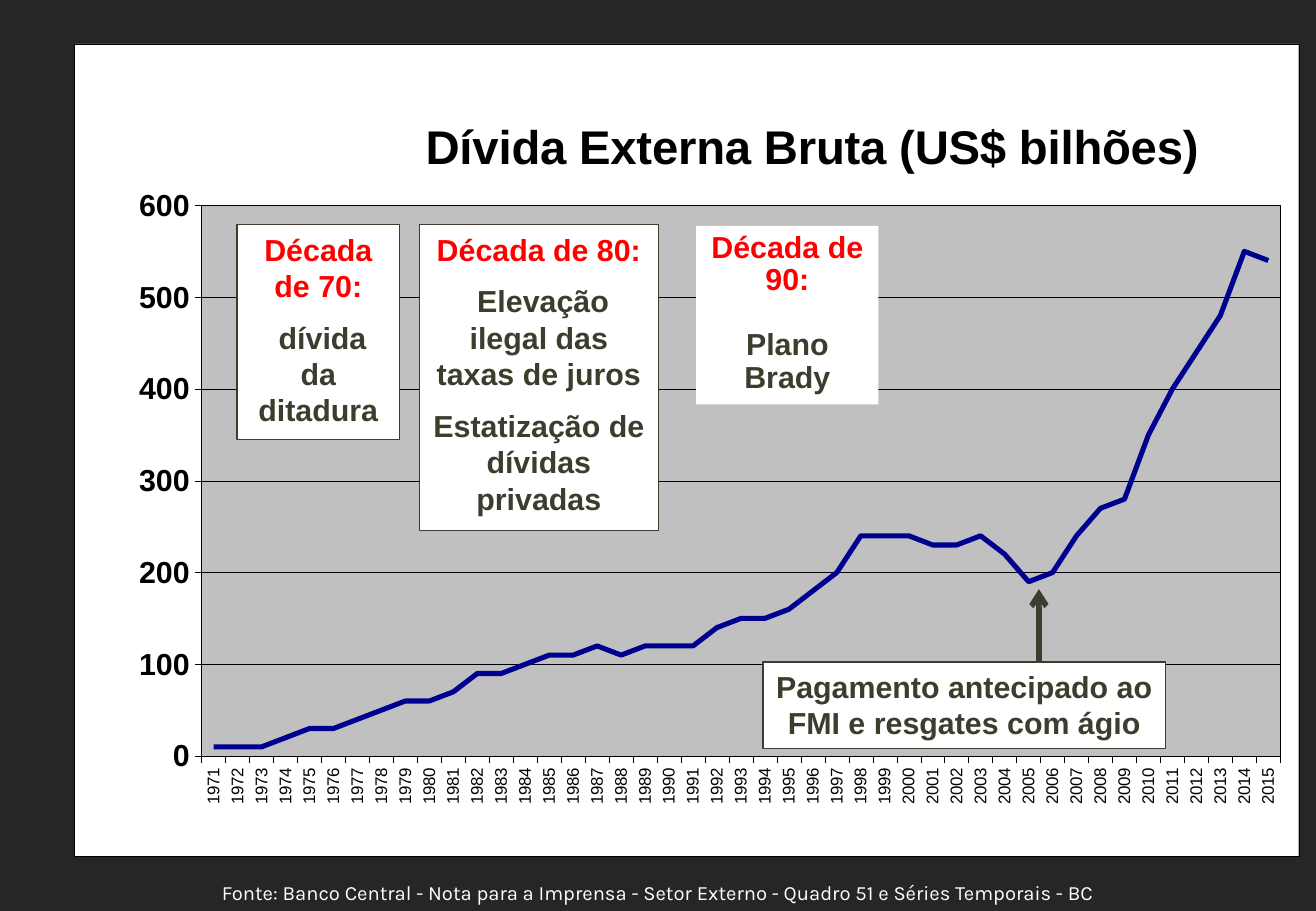
from lxml import etree
from pptx import Presentation
from pptx.chart.data import CategoryChartData
from pptx.dml.color import RGBColor
from pptx.enum.chart import XL_CHART_TYPE as ChartType, XL_TICK_MARK as TickMark
from pptx.enum.shapes import MSO_CONNECTOR as Connector, MSO_SHAPE as Shape
from pptx.enum.text import MSO_ANCHOR as Anchor, PP_ALIGN as Align
from pptx.oxml import parse_xml
from pptx.oxml.ns import nsdecls, qn
from pptx.util import Inches, Pt

BLACK, WHITE, RED, OLIVE = "000000", "FFFFFF", "FF0000", "3E3D2D"
BACKDROP, PLOT_GRAY, NAVY = "262626", "C0C0C0", "000090"

TITLE = "Dívida Externa Bruta (US$ bilhões)"
SOURCE = ("Fonte: Banco Central - Nota para a Imprensa - Setor Externo - "
          "Quadro 51 e Séries Temporais - BC")
FIRST_YEAR = 1971
DEBT = [
    10, 10, 10, 20, 30, 30, 40, 50, 60, 60, 70, 90, 90, 100, 110,
    110, 120, 110, 120, 120, 120, 140, 150, 150, 160, 180, 200, 240, 240, 240,
    230, 230, 240, 220, 190, 200, 240, 270, 280, 350, 400, 440, 480, 550, 540,
]
# fields: box, outlined, line spacing, paragraphs as (text, color, points before)
NOTES = [
    ((1.95, 1.85, 1.34, 1.77), True, 1,
     [("Década de 70:", RED, 0), (" dívida da ditadura", OLIVE, 9)]),
    ((3.45, 1.85, 1.97, 2.52), True, 1,
     [("Década de 80:", RED, 0),
      (" Elevação ilegal das taxas de juros", OLIVE, 9),
      ("Estatização de dívidas privadas", OLIVE, 9)]),
    ((6.28, 5.45, 3.31, 0.71), True, 1,
     [("Pagamento antecipado ao FMI e resgates com ágio", OLIVE, 0)]),
    ((5.73, 1.86, 1.5, 1.47), False, 0.9,
     [("Década de 90:", RED, 0), ("Plano", OLIVE, 19), ("Brady", OLIVE, 0)]),
]
ARROW = (8.55, 5.45, 8.55, 4.85)


def rgb(value):
    return RGBColor.from_string(value)


def inches(values):
    return [Inches(value) for value in values]


def set_fill(fill, color):
    fill.solid()
    fill.fore_color.rgb = rgb(color)


def set_line(line, color, width):
    line.width = Pt(width)
    set_fill(line.fill, color)


def set_font(font, name, size, color, bold=False):
    font.name, font.size, font.bold = name, Pt(size), bold
    font.color.rgb = rgb(color)


def chart_area(fill, line, width):
    return parse_xml(
        f'<c:spPr {nsdecls("c", "a")}>'
        f'<a:solidFill><a:srgbClr val="{fill}"/></a:solidFill>'
        f'<a:ln w="{Pt(width)}"><a:solidFill><a:srgbClr val="{line}"/>'
        '</a:solidFill></a:ln></c:spPr>')


def manual_layout(target="", **values):
    inner = f'<c:layoutTarget val="{target}"/>' if target else ""
    modes = "".join(f'<c:{axis}Mode val="edge"/>' for axis in "xy")
    places = "".join(f'<c:{key} val="{value}"/>' for key, value in values.items())
    return parse_xml(f'<c:layout {nsdecls("c")}><c:manualLayout>'
                     f'{inner}{modes}{places}</c:manualLayout></c:layout>')


def drop_layout(parent):
    for layout in parent.findall(qn("c:layout")):
        parent.remove(layout)


def add_debt_chart(page):
    data = CategoryChartData()
    data.categories = [str(FIRST_YEAR + step) for step in range(len(DEBT))]
    data.add_series("Series 1", DEBT)
    chart = page.shapes.add_chart(
        ChartType.LINE, *inches((0.61, 0.36, 10.08, 6.69)), data).chart
    chart.has_legend = False
    set_font(chart.font, "Arial", 19, BLACK)

    chart.has_title = True
    chart.chart_title.text_frame.text = TITLE
    span = chart.chart_title.text_frame.paragraphs[0].runs[0]
    set_font(span.font, "Arial", 28, BLACK, True)

    chart.plots[0].vary_by_categories = False
    series = chart.plots[0].series[0]
    series.smooth = False
    set_line(series.format.line, NAVY, 3)

    years, amounts = chart.category_axis, chart.value_axis
    for axis, size, bold in ((years, 10, False), (amounts, 18, True)):
        axis.major_tick_mark = TickMark.OUTSIDE
        axis.minor_tick_mark = TickMark.NONE
        set_line(axis.format.line, BLACK, 0.25)
        set_font(axis.tick_labels.font, "Arial", size, BLACK, bold)
    years.has_major_gridlines = False
    amounts.minimum_scale, amounts.maximum_scale, amounts.major_unit = 0, 600, 100
    amounts.tick_labels.number_format = "#,##0"
    amounts.tick_labels.number_format_is_linked = False
    amounts.has_major_gridlines = True
    set_line(amounts.major_gridlines.format.line, BLACK, 0.25)

    root = chart.element
    root.xpath("//c:catAx/c:txPr/a:bodyPr")[0].set("rot", "-5400000")
    title = root.xpath("c:chart/c:title")[0]
    drop_layout(title)
    title.find(qn("c:tx")).addnext(manual_layout(x=0.28, y=0.08))
    plot_area = root.xpath("c:chart/c:plotArea")[0]
    drop_layout(plot_area)
    plot_area.insert(0, manual_layout("inner", x=0.104, y=0.199, w=0.881, h=0.678))
    plot_area.append(chart_area(PLOT_GRAY, BLACK, 0.25))
    root.find(qn("c:chart")).addnext(chart_area(WHITE, BLACK, 0.25))


def add_note(page, place, outlined, spacing, lines):
    box = page.shapes.add_shape(Shape.RECTANGLE, *inches(place))
    box.shadow.inherit = False
    set_fill(box.fill, WHITE)
    if outlined:
        set_line(box.line, OLIVE, 0.75)
    else:
        box.line.fill.background()
    frame = box.text_frame
    frame.word_wrap = True
    frame.vertical_anchor = Anchor.TOP
    frame.text = "\n".join(text for text, color, before in lines)
    for para, (text, color, before) in zip(frame.paragraphs, lines):
        para.alignment = Align.CENTER
        para.line_spacing = spacing
        para.space_before = Pt(before)
        set_font(para.runs[0].font, "Arial", 18, color, True)


def add_arrow(page):
    arrow = page.shapes.add_connector(Connector.STRAIGHT, *inches(ARROW))
    set_line(arrow.line, OLIVE, 3.25)
    properties = arrow.element.spPr
    etree.SubElement(properties.find(qn("a:ln")), qn("a:tailEnd"), type="arrow")
    etree.SubElement(properties, qn("a:effectLst"))


def add_source(page):
    box = page.shapes.add_textbox(*inches((0, 7.2, 10.83, 0.3)))
    box.text_frame.word_wrap = True
    box.text_frame.text = SOURCE
    para = box.text_frame.paragraphs[0]
    para.alignment = Align.CENTER
    set_font(para.runs[0].font, "Karla", 12, WHITE)


def main():
    deck = Presentation()
    deck.slide_width, deck.slide_height = inches((10.83, 7.5))
    page = deck.slides.add_slide(deck.slide_layouts[6])
    set_fill(page.background.fill, BACKDROP)
    add_debt_chart(page)
    add_source(page)
    for note in NOTES:
        add_note(page, *note)
    add_arrow(page)
    deck.save("out.pptx")


if __name__ == "__main__":
    main()
